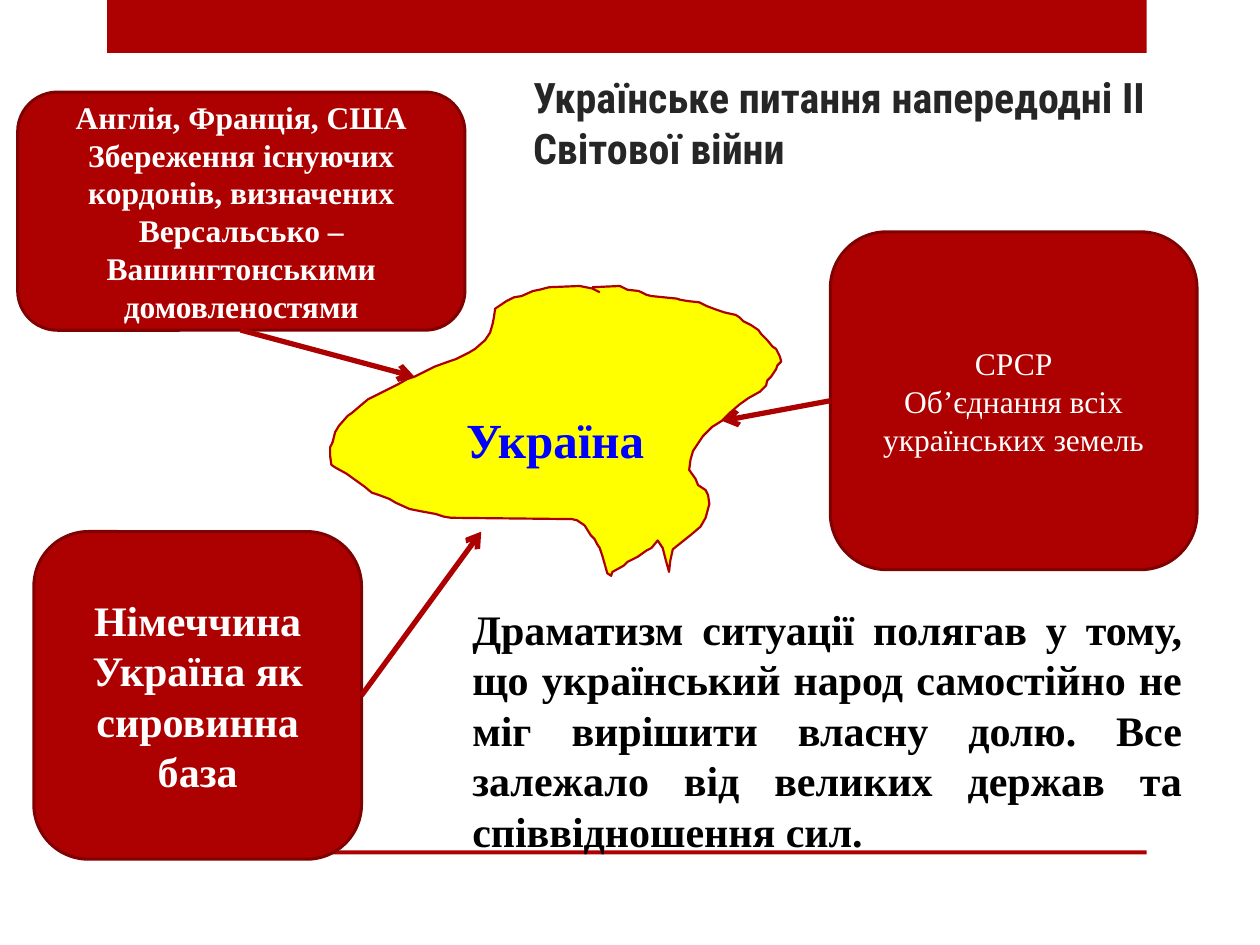
import pptx
import pptx.dml.color
import pptx.enum.shapes
import pptx.enum.text
import pptx.oxml
import pptx.oxml.ns
import pptx.util

Pt = pptx.util.Pt
RGBColor = pptx.dml.color.RGBColor
Shapes = pptx.enum.shapes.MSO_SHAPE
Align = pptx.enum.text.PP_ALIGN
Anchor = pptx.enum.text.MSO_ANCHOR

RED = RGBColor(0xAD, 0x01, 0x01)
DARK_RED = RGBColor(0x80, 0x01, 0x01)
YELLOW = RGBColor(0xFF, 0xFF, 0x00)
BLUE = RGBColor(0x00, 0x00, 0xFF)
WHITE = RGBColor(0xFF, 0xFF, 0xFF)
BLACK = RGBColor(0x00, 0x00, 0x00)
CHARCOAL = RGBColor(0x26, 0x26, 0x26)

SERIF = "Times New Roman"
MAP_UNIT = Pt(0.72)
UKRAINE_OUTLINE = [
    (476, 232), (470, 229), (460, 227), (436, 228), (428, 230), (423, 231),
    (414, 235), (408, 236), (402, 239), (396, 243), (393, 245), (392, 252),
    (391, 257), (389, 264), (385, 270), (377, 277), (372, 280), (362, 285),
    (356, 287), (345, 291), (337, 295), (329, 299), (323, 301), (316, 305),
    (308, 309), (300, 313), (292, 317), (279, 328), (276, 330), (269, 338),
    (266, 343), (264, 351), (262, 355), (262, 362), (263, 369), (266, 371),
    (275, 376), (289, 386), (295, 391), (301, 393), (309, 396), (314, 399),
    (325, 404), (335, 406), (346, 408), (352, 410), (358, 411), (454, 412),
    (458, 413), (464, 417), (469, 425), (472, 428), (474, 432), (476, 435),
    (478, 441), (480, 448), (482, 455), (485, 457), (486, 454), (495, 449),
    (498, 446), (506, 442), (513, 437), (517, 435), (522, 429), (526, 435),
    (528, 443), (531, 454), (532, 445), (534, 436), (549, 424), (556, 418),
    (560, 411), (563, 400), (562, 393), (560, 389), (554, 385), (552, 380),
    (547, 373), (548, 365), (550, 358), (558, 346), (565, 339), (573, 334),
    (580, 327), (587, 321), (594, 316), (603, 311), (608, 306), (609, 302),
    (612, 299), (616, 293), (617, 290), (620, 287), (619, 283), (616, 277),
    (613, 275), (609, 270), (604, 265), (602, 262), (596, 258), (590, 255),
    (587, 252), (584, 250), (575, 248), (569, 246), (561, 243), (555, 240),
    (546, 239), (540, 238), (537, 237), (517, 235), (513, 234), (507, 231),
    (498, 230), (492, 227), (470, 228),
]


def paint(shape, fill, outline=None, weight=0):
    shape.shadow.inherit = False
    shape.fill.solid()
    shape.fill.fore_color.rgb = fill
    if outline is None:
        shape.line.fill.background()
    else:
        shape.line.color.rgb = outline
        shape.line.width = Pt(weight)


def write(frame, paragraphs, size, color, bold=True, font=SERIF,
          align=Align.CENTER, anchor=Anchor.TOP):
    frame.word_wrap = True
    frame.auto_size = pptx.enum.text.MSO_AUTO_SIZE.NONE
    frame.vertical_anchor = anchor
    frame.text = "\n".join(paragraphs)
    formats = {"name": font, "size": Pt(size), "bold": bold}
    for paragraph in frame.paragraphs:
        paragraph.alignment = align
        run_font = paragraph.runs[0].font
        for attribute, value in formats.items():
            setattr(run_font, attribute, value)
        run_font.color.rgb = color


def add_title(slide, text, box):
    title = slide.shapes.title
    for attribute, value in zip(("left", "top", "width", "height"), box):
        setattr(title, attribute, Pt(value))
    write(title.text_frame, [text], 24, CHARCOAL,
          font="Roboto Condensed", align=Align.LEFT)


def add_bar(slide, box):
    bar = slide.shapes.add_shape(Shapes.RECTANGLE, *map(Pt, box))
    paint(bar, RED)


def add_map(slide):
    builder = slide.shapes.build_freeform(*UKRAINE_OUTLINE[0], scale=MAP_UNIT)
    builder.add_line_segments(UKRAINE_OUTLINE[1:], close=False)
    paint(builder.convert_to_shape(), YELLOW, RED, 1.25)


def add_position(slide, box, paragraphs, size, bold=True):
    position = slide.shapes.add_shape(Shapes.ROUNDED_RECTANGLE, *map(Pt, box))
    paint(position, RED, DARK_RED, 1.75)
    write(position.text_frame, paragraphs, size, WHITE, bold,
          anchor=Anchor.MIDDLE)


def add_arrow(slide, start, end):
    arrow = slide.shapes.add_connector(
        pptx.enum.shapes.MSO_CONNECTOR.STRAIGHT, *map(Pt, start + end))
    arrow.line.color.rgb = RED
    arrow.line.width = Pt(3)
    head = pptx.oxml.parse_xml(
        f'<a:tailEnd {pptx.oxml.ns.nsdecls("a")} type="arrow"/>')
    arrow.line._get_or_add_ln().append(head)
    arrow._element.spPr.append(
        pptx.oxml.parse_xml(f'<a:effectLst {pptx.oxml.ns.nsdecls("a")}/>'))


def add_text(slide, box, text, size, color, align):
    caption = slide.shapes.add_textbox(*map(Pt, box))
    write(caption.text_frame, [text], size, color, align=align)


def main():
    deck = pptx.Presentation()
    deck.slide_width, deck.slide_height = Pt(720), Pt(540)
    slide = deck.slides.add_slide(deck.slide_layouts[5])

    add_bar(slide, (61.2, 0, 594, 30.2))
    add_bar(slide, (61.2, 486, 594, 2.2))
    add_title(slide, "Українське питання напередодні ІІ Світової війни",
              (297.4, 37.4, 386.6, 39.6))
    add_map(slide)
    add_text(slide, (252, 230.4, 130.3, 41), "Україна", 28, BLUE, Align.CENTER)

    add_position(slide, (10.1, 52.6, 255.6, 136.1), [
        "Англія, Франція, США",
        "Збереження існуючих кордонів, визначених Версальсько – "
        "Вашингтонськими домовленостями"], 18)
    add_arrow(slide, (137.5, 188.6), (236.9, 215.3))

    add_position(slide, (19.4, 303.8, 187.2, 187.2),
                 ["Німеччина", "Україна як сировинна база"], 24)
    add_arrow(slide, (206.6, 397.4), (275, 303.8))

    add_position(slide, (474.5, 132.5, 209.5, 193),
                 ["СРСР", "Об’єднання всіх українських земель"], 18, False)
    add_arrow(slide, (474.5, 229), (412.6, 240.5))

    add_text(slide, (262.8, 341.3, 419.8, 152.6),
             "Драматизм ситуації полягав у тому, що український народ "
             "самостійно не міг вирішити власну долю. Все залежало від "
             "великих держав та співвідношення сил.",
             24, BLACK, Align.JUSTIFY)

    deck.save("out.pptx")


if __name__ == "__main__":
    main()
